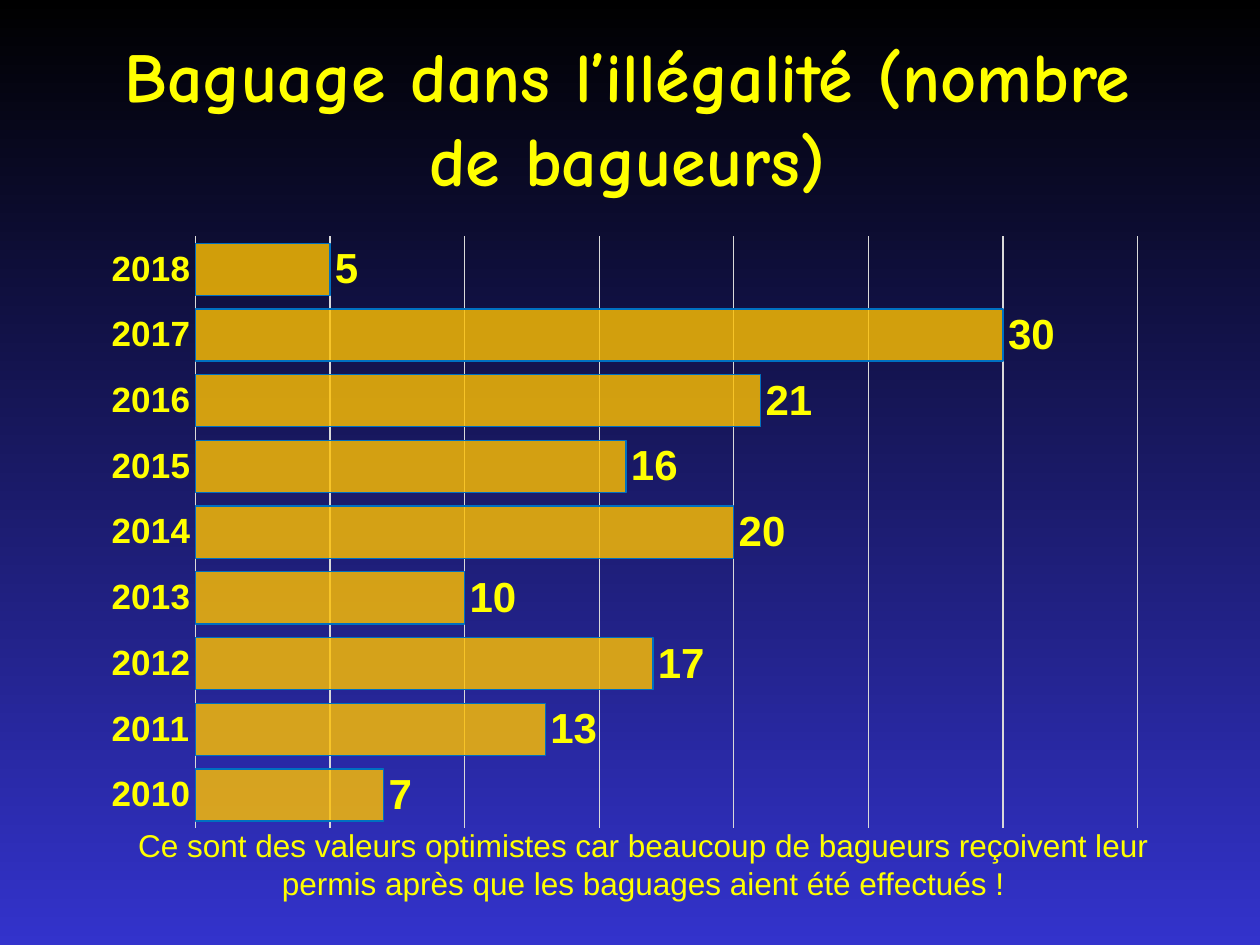
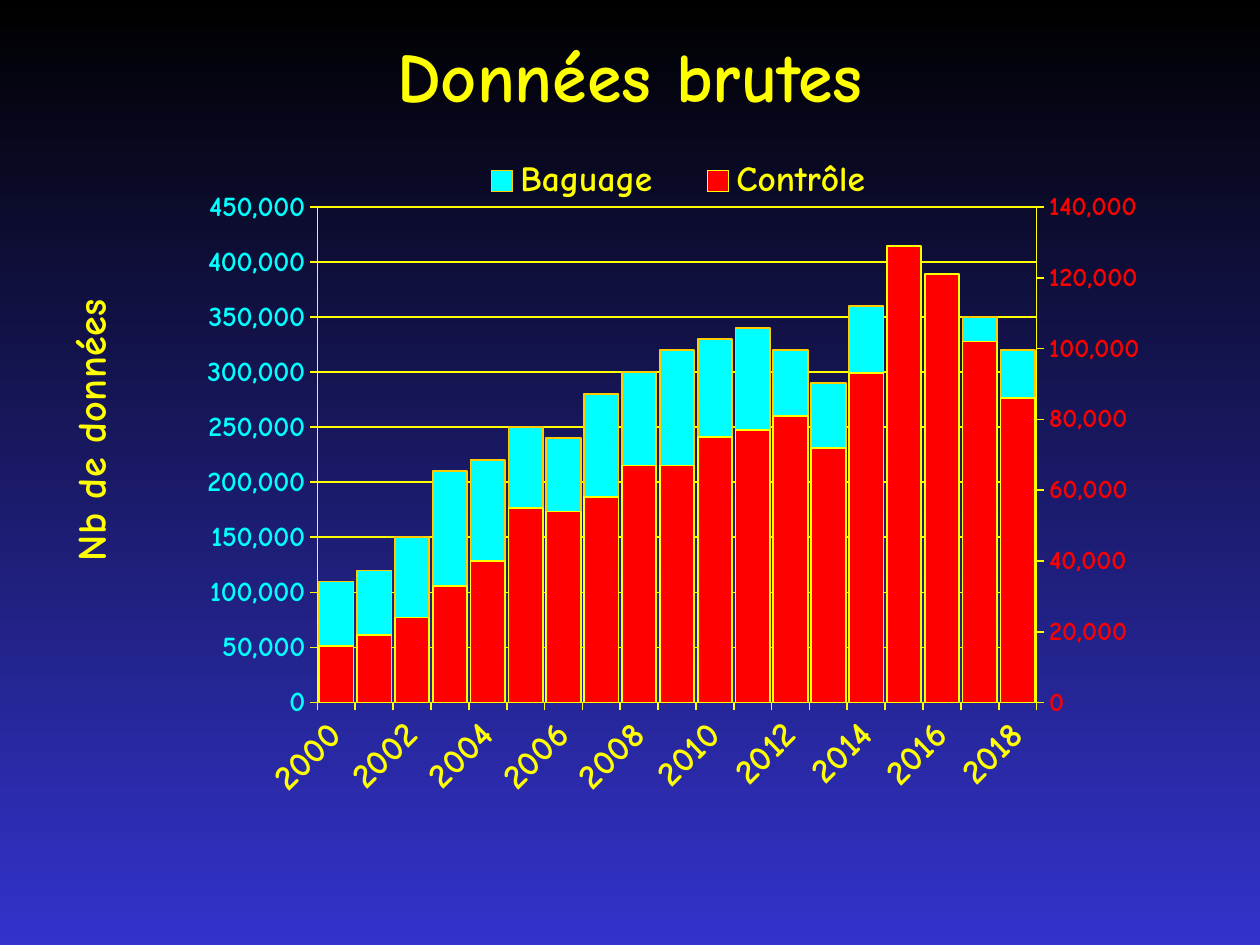
from copy import deepcopy

from lxml.etree import SubElement
from pptx import Presentation
from pptx.chart.axis import ValueAxis
from pptx.chart.data import CategoryChartData
from pptx.dml.color import RGBColor
from pptx.enum.chart import XL_CHART_TYPE as ChartType
from pptx.enum.chart import XL_LABEL_POSITION as LabelPosition
from pptx.enum.chart import XL_LEGEND_POSITION as LegendPosition
from pptx.enum.chart import XL_TICK_MARK as Tick
from pptx.enum.text import MSO_ANCHOR as Anchor
from pptx.enum.text import MSO_AUTO_SIZE as AutoSize
from pptx.enum.text import PP_ALIGN as Align
from pptx.oxml import parse_xml
from pptx.oxml.ns import nsdecls, qn
from pptx.util import Inches, Pt

YELLOW, CYAN, RED = "FFFF00", "00FFFF", "FF0000"
GOLD, GREY = "FFC000", "D9D9D9"
COLUMNS, ROWS = 100, 75
TITLE_ONLY = 5


def rgb(color):
    return RGBColor.from_string(color)


def set_font(font, size, color, name, bold=True):
    font.size, font.name, font.bold = Pt(size), name, bold
    font.color.rgb = rgb(color)


def set_line(line, color, width):
    line.color.rgb = rgb(color)
    line.width = Pt(width)


def set_layout(parent, index, inner=False, **shares):
    """Place a chart part by shares of the chart's size."""
    for old in parent.findall(qn("c:layout")):
        parent.remove(old)
    layout = parse_xml(f"<c:layout {nsdecls('c')}><c:manualLayout/></c:layout>")
    manual = layout[0]
    if inner:
        SubElement(manual, qn("c:layoutTarget")).set("val", "inner")
    for key in "xy":
        SubElement(manual, qn(f"c:{key}Mode")).set("val", "edge")
    for key, share in shares.items():
        SubElement(manual, qn(f"c:{key}")).set("val", str(share))
    parent.insert(index, layout)


def style_axis(axis, size, color, font, line, width, tick):
    set_font(axis.tick_labels.font, size, color, font)
    set_line(axis.format.line, line, width)
    axis.major_tick_mark, axis.minor_tick_mark = tick, Tick.NONE


def set_scale(axis, top, step):
    axis.minimum_scale, axis.maximum_scale, axis.major_unit = 0, top, step


def set_grid(axis, color, width):
    axis.has_major_gridlines = True
    set_line(axis.major_gridlines.format.line, color, width)


def style_series(series, fill, line, width):
    series.format.fill.solid()
    series.format.fill.fore_color.rgb = rgb(fill)
    series.invert_if_negative = False
    set_line(series.format.line, line, width)


def add_right_axis(chart):
    """Move the last series to a second pair of axes and return its value axis."""
    plot_area = chart.plots[0]._element.getparent()
    left_bars = plot_area.find(qn("c:barChart"))
    right_bars = deepcopy(left_bars)
    left_bars.remove(left_bars.findall(qn("c:ser"))[-1])
    for series in right_bars.findall(qn("c:ser"))[:-1]:
        right_bars.remove(series)
    left_bars.addnext(right_bars)

    category = deepcopy(chart.category_axis._element)
    value = deepcopy(chart.value_axis._element)
    plot_area.find(qn("c:valAx")).addnext(category)
    category.addnext(value)
    ids = ["5001", "5002"]
    for tag, number in zip(right_bars.findall(qn("c:axId")), ids):
        tag.set("val", number)
    for axis, own, other in ((category, *ids), (value, *reversed(ids))):
        axis.find(qn("c:axId")).set("val", own)
        axis.find(qn("c:crossAx")).set("val", other)
    category.find(qn("c:delete")).set("val", "1")
    value.find(qn("c:axPos")).set("val", "r")
    value.find(qn("c:crosses")).set("val", "max")
    right = ValueAxis(value)
    right.has_major_gridlines = False
    return right


class Deck:
    head_font, body_font = "Comic Neue", "Arial"

    def __init__(self):
        self.deck = Presentation()
        self.deck.slide_width, self.deck.slide_height = Inches(10), Inches(7.5)
        self.page = None
        fill = self.deck.slide_master.background.fill
        fill.gradient()
        fill.gradient_angle = 270
        for stop, color in zip(fill.gradient_stops, ("000000", "3333CC")):
            stop.color.rgb = rgb(color)

    def cells(self, left, top, width, height):
        """Turn columns and rows of the grid into slide lengths."""
        column = self.deck.slide_width / COLUMNS
        row = self.deck.slide_height / ROWS
        return [int(n) for n in (left * column, top * row, width * column, height * row)]

    def add_text(self, frame, text, size, font, bold):
        frame.word_wrap, frame.vertical_anchor = True, Anchor.TOP
        para = frame.paragraphs[0]
        para.alignment = Align.CENTER
        span = para.add_run()
        span.text = text
        set_font(span.font, size, YELLOW, font, bold)
        return span

    def add_page(self, title, left):
        self.page = self.deck.slides.add_slide(self.deck.slide_layouts[TITLE_ONLY])
        box = self.page.shapes.title
        box.left, box.top, box.width, box.height = self.cells(left, 2.1, 85, 12.5)
        box.text_frame.auto_size = AutoSize.NONE
        span = self.add_text(box.text_frame, title, 40, self.head_font, True)
        shadow = parse_xml(
            f'<a:effectLst {nsdecls("a")}><a:outerShdw dist="35921" dir="2700000">'
            '<a:srgbClr val="000000"/></a:outerShdw></a:effectLst>')
        span.font._element.find(qn("a:solidFill")).addnext(shadow)

    def add_caption(self, text, *place):
        box = self.page.shapes.add_textbox(*self.cells(*place))
        self.add_text(box.text_frame, text, 18, self.body_font, False)

    def add_bars(self, kind, years, table, gap, place, plot_place):
        data = CategoryChartData(number_format="#,##0")
        data.categories = [str(year) for year in years]
        for name, values in table.items():
            data.add_series(name, values)
        chart = self.page.shapes.add_chart(kind, *self.cells(*place), data).chart
        chart.has_title = chart.has_legend = False
        plot = chart.plots[0]
        plot.gap_width, plot.vary_by_categories = gap, False
        set_layout(plot._element.getparent(), 0, inner=True, **plot_place)
        return chart

    def add_illegal_chart(self, years, ringers):
        chart = self.add_bars(
            ChartType.BAR_CLUSTERED, years, {"Series 1": ringers}, 26,
            (7, 17.8, 85, 48.9), dict(x=0.1, y=0.02, w=0.88, h=0.96))
        style_axis(chart.category_axis, 20, YELLOW, self.body_font, GREY, 0.75, Tick.NONE)
        set_scale(chart.value_axis, 35, 5)
        set_grid(chart.value_axis, GREY, 0.75)
        chart.value_axis.visible = False
        plot = chart.plots[0]
        style_series(plot.series[0], GOLD, "0070C0", 0.75)
        fill = plot.series[0]._element.xpath("c:spPr/a:solidFill/a:srgbClr")[0]
        SubElement(fill, qn("a:alpha")).set("val", "81000")
        plot.has_data_labels = True
        labels = plot.data_labels
        labels.show_value, labels.position = True, LabelPosition.OUTSIDE_END
        set_font(labels.font, 24, YELLOW, self.body_font)

    def add_raw_data_chart(self, years, table):
        chart = self.add_bars(
            ChartType.COLUMN_CLUSTERED, years, table, 10,
            (2.9, 11.6, 96.1, 61.1), dict(x=0.232, y=0.079, w=0.594, h=0.644))
        font = self.head_font
        plot = chart.plots[0]
        plot.overlap = 100
        for series, fill, line in zip(plot.series, (CYAN, RED), ("FFCC00", YELLOW)):
            style_series(series, fill, line, 1)

        years_axis, left = chart.category_axis, chart.value_axis
        for axis, size, color in ((years_axis, 20, YELLOW), (left, 16, CYAN)):
            style_axis(axis, size, color, font, YELLOW, 1, Tick.OUTSIDE)
        left.tick_labels.number_format = "#,##0"
        left.tick_labels.number_format_is_linked = False
        right = add_right_axis(chart)
        set_font(right.tick_labels.font, 15, RED, font)
        set_scale(left, 450000, 50000)
        set_scale(right, 140000, 20000)
        set_grid(left, YELLOW, 1)

        years_tag = years_axis._element
        years_tag.find(qn("c:txPr")).find(qn("a:bodyPr")).set("rot", "-2700000")
        skip = parse_xml(f'<c:tickLblSkip {nsdecls("c")} val="2"/>')
        years_tag.find(qn("c:noMultiLvlLbl")).addprevious(skip)

        left.has_title = True
        frame = left.axis_title.text_frame
        span = frame.paragraphs[0].add_run()
        span.text = "Nb de données"
        set_font(span.font, 23, YELLOW, font)
        frame._txBody.find(qn("a:bodyPr")).set("rot", "-5400000")
        set_layout(left.axis_title._element, 1, x=0.017, y=0.19)

        chart.has_legend = True
        legend = chart.legend
        legend.position, legend.include_in_layout = LegendPosition.TOP, False
        set_font(legend.font, 20.2, YELLOW, font)
        set_layout(legend._element, 1, x=0.34, y=0.015, w=0.38, h=0.06)


def main():
    show = Deck()
    show.add_page("Baguage dans l’illégalité (nombre de bagueurs)", 7.3)
    show.add_illegal_chart(range(2010, 2019), [7, 13, 17, 10, 20, 16, 21, 30, 5])
    show.add_caption(
        "Ce sont des valeurs optimistes car beaucoup de bagueurs reçoivent leur "
        "permis après que les baguages aient été effectués !", 9.5, 65.1, 83.1, 7.1)

    show.add_page("Données brutes", 7.5)
    thousands = {
        "Baguage": [110, 120, 150, 210, 220, 250, 240, 280, 300, 320,
                    330, 340, 320, 290, 360, 390, 340, 350, 320],
        "Contrôle": [16, 19, 24, 33, 40, 55, 54, 58, 67, 67,
                     75, 77, 81, 72, 93, 129, 121, 102, 86],
    }
    show.add_raw_data_chart(
        range(2000, 2019),
        {name: [value * 1000 for value in values] for name, values in thousands.items()})
    show.deck.save("out.pptx")


if __name__ == "__main__":
    main()
